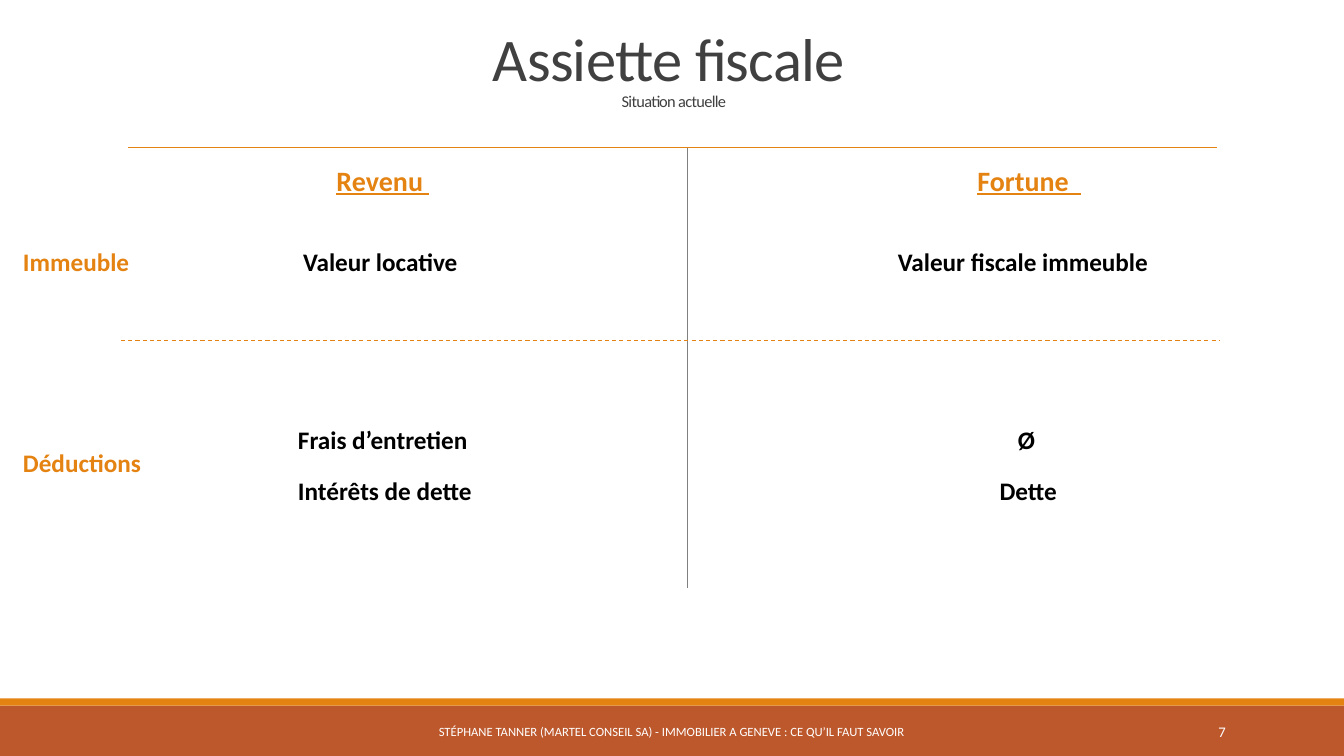
from lxml import etree
from pptx import Presentation
from pptx import util as u
from pptx.dml.color import RGBColor
from pptx.enum import dml, shapes, text
from pptx.oxml import ns

ORANGE = RGBColor(0xE4, 0x83, 0x12)
RUST = RGBColor(0xBD, 0x58, 0x2C)
DARK = RGBColor(0x40, 0x40, 0x40)
GREY = RGBColor(0x80, 0x80, 0x80)
BLACK = RGBColor(0, 0, 0)
WHITE = RGBColor(0xFF, 0xFF, 0xFF)

LABEL_HEIGHT = 1.02
HEADING_TOP = 3.99
PROPERTY_TOP = 6.07
COSTS_TOP = 10.57
DEBT_TOP = 11.86


def add_band(page, top, height, color):
    band = page.shapes.add_shape(shapes.MSO_SHAPE.RECTANGLE, 0, u.Cm(top),
                                 u.Cm(33.87), u.Cm(height))
    band.shadow.inherit = False
    band.fill.solid()
    band.fill.fore_color.rgb = color
    band.line.fill.background()


def add_rule(page, start, end, color, width=1, dash=None):
    rule = page.shapes.add_connector(
        shapes.MSO_CONNECTOR.STRAIGHT, *(u.Cm(v) for v in start + end))
    rule.line.color.rgb = color
    rule.line.width = u.Pt(width)
    if dash:
        rule.line.dash_style = dash
    etree.SubElement(rule._element.spPr, ns.qn("a:effectLst"))


def add_box(page, left, top, width, height,
            align=text.PP_ALIGN.LEFT, anchor=text.MSO_ANCHOR.TOP):
    """Add an empty text box and return its first paragraph."""
    box = page.shapes.add_textbox(*(u.Cm(v) for v in (left, top, width, height)))
    box.text_frame.word_wrap = True
    box.text_frame.vertical_anchor = anchor
    para = box.text_frame.paragraphs[0]
    para.alignment = align
    return para


def add_span(para, words, size, color, bold=False, underline=False):
    span = para.add_run()
    span.text = words
    span.font.name = "Calibri"
    span.font.size = u.Pt(size)
    span.font.color.rgb = color
    span.font.bold = bold
    span.font.underline = underline
    return span


def add_title(page, heading, subtitle):
    para = add_box(page, 3.05, 0.74, 27.94, 2.18,
                   text.PP_ALIGN.CENTER, text.MSO_ANCHOR.BOTTOM)
    para.line_spacing = 0.85
    spans = [add_span(para, heading, 43.2, DARK)]
    para.add_line_break()
    spans.append(add_span(para, subtitle, 11.7, DARK))
    for span in spans:
        span._r.get_or_add_rPr().set("spc", "-50")


def add_footer(page):
    add_band(page, 17.78, 1.27, RUST)
    add_band(page, 17.6, 0.18, ORANGE)
    middle = text.MSO_ANCHOR.MIDDLE
    notice = add_box(page, 8.23, 17.93, 17.45, 1.02, text.PP_ALIGN.CENTER, middle)
    add_span(notice, "STÉPHANE TANNER (MARTEL CONSEIL SA) - IMMOBILIER A GENEVE : "
                     "CE QU’IL FAUT SAVOIR ", 9, WHITE)
    number = add_box(page, 27.51, 17.93, 3.63, 1.02, text.PP_ALIGN.RIGHT, middle)
    add_span(number, "7", 10.5, WHITE)


def main():
    deck = Presentation()
    deck.slide_width, deck.slide_height = u.Cm(33.87), u.Cm(19.05)
    page = deck.slides.add_slide(deck.slide_layouts[6])

    add_footer(page)
    add_title(page, "Assiette fiscale ", "Situation actuelle ")

    add_rule(page, (17.32, 3.71), (17.32, 14.81), GREY)
    add_rule(page, (3.23, 3.71), (30.68, 3.71), ORANGE)
    add_rule(page, (3.05, 8.59), (30.73, 8.59), ORANGE, 0.75, dml.MSO_LINE.DASH)

    for heading, left in (("Revenu ", 8.23), ("Fortune  ", 24.38)):
        para = add_box(page, left, HEADING_TOP, 6.22, 1.12)
        add_span(para, heading, 20, ORANGE, bold=True, underline=True)

    for label, top in (("Immeuble", PROPERTY_TOP), ("Déductions", 11.15)):
        para = add_box(page, 0.33, top, 3.99, LABEL_HEIGHT)
        add_span(para, label, 18, ORANGE, bold=True)

    entries = (
        ("Valeur locative", 7.39, PROPERTY_TOP, 5.11),
        ("Valeur fiscale immeuble", 22.38, PROPERTY_TOP, 7.39),
        ("Frais d’entretien", 7.26, COSTS_TOP, 5.11),
        ("Intérêts de dette", 7.26, DEBT_TOP, 5.11),
        ("Ø", 25.4, COSTS_TOP, 5.11),
        ("Dette", 24.94, DEBT_TOP, 5.11),
    )
    for words, left, top, width in entries:
        para = add_box(page, left, top, width, LABEL_HEIGHT)
        add_span(para, words, 18, BLACK, bold=True)

    deck.save("out.pptx")


if __name__ == "__main__":
    main()
